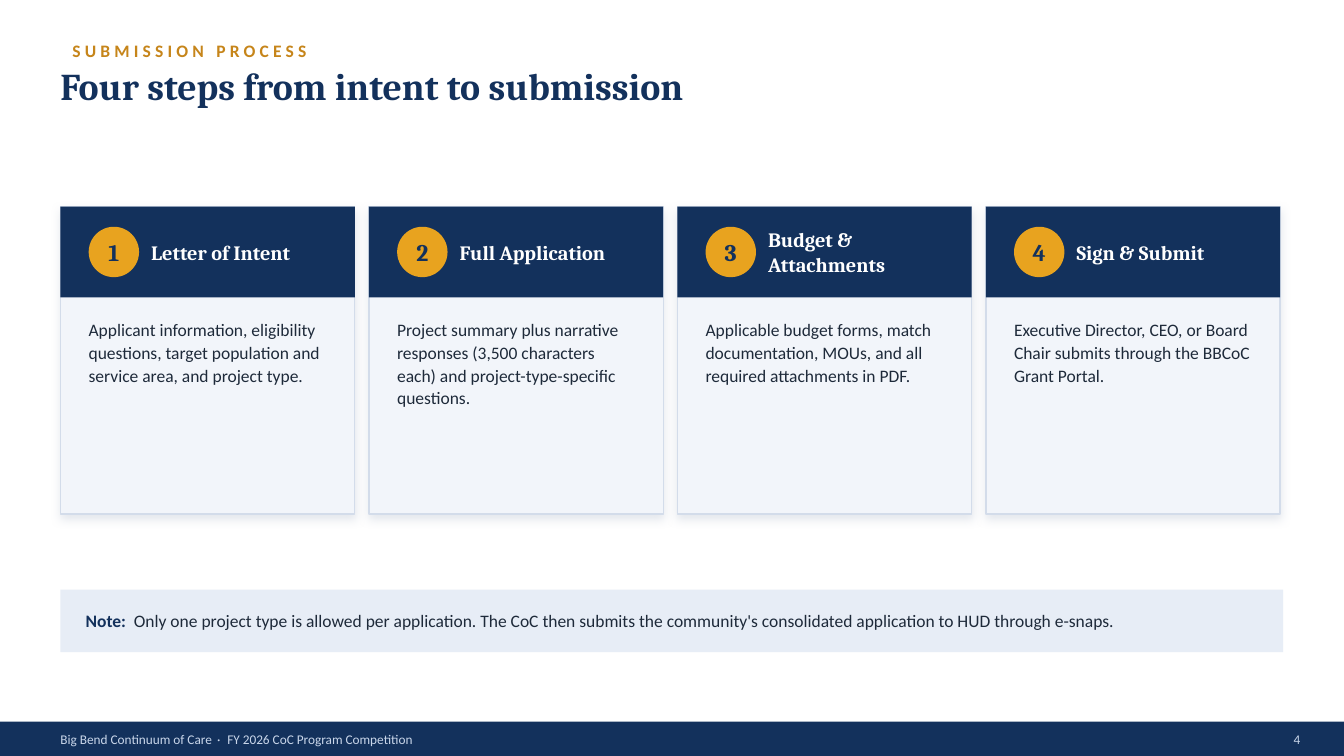
from dataclasses import dataclass
from typing import NamedTuple

from lxml import etree
from pptx import Presentation
from pptx import util as u
from pptx.dml.color import RGBColor
from pptx.enum import shapes, text
from pptx.oxml import ns

NAVY = RGBColor(0x13, 0x31, 0x5C)
GOLD = RGBColor(0xE8, 0xA3, 0x1F)
OCHRE = RGBColor(0xC6, 0x85, 0x1A)
INK = RGBColor(0x1E, 0x2A, 0x3A)
WHITE = RGBColor(0xFF, 0xFF, 0xFF)
PANEL = RGBColor(0xF2, 0xF5, 0xFA)
PANEL_EDGE = RGBColor(0xD3, 0xDC, 0xEA)
PANEL_SHADE = RGBColor(0x9A, 0xA7, 0xBC)
NOTE_FILL = RGBColor(0xE7, 0xED, 0xF6)
FOOTER_INK = RGBColor(0xC9, 0xD6, 0xEA)

CELL = u.Inches(0.1)
SLIDE_COLS, SLIDE_ROWS = 133.33, 75
MARGIN = 6
CARD_COLS, CARD_GAP = 29.2, 1.4
CARD_ROW, CARD_ROWS, HEADER_ROWS = 20.5, 30.5, 9
CARD_PAD, BADGE = 2.8, 5
FOOTER_ROW, FOOTER_ROWS = 71.6, 3.4

SANS, SERIF = "Calibri", "Cambria"
TOP, MIDDLE = text.MSO_ANCHOR.TOP, text.MSO_ANCHOR.MIDDLE
LEFT, CENTER, RIGHT = text.PP_ALIGN.LEFT, text.PP_ALIGN.CENTER, text.PP_ALIGN.RIGHT
RECT, OVAL = shapes.MSO_SHAPE.RECTANGLE, shapes.MSO_SHAPE.OVAL


class Box(NamedTuple):
    col: float
    row: float
    cols: float
    rows: float

    def emu(self) -> list[int]:
        return [round(length * CELL) for length in self]


class Run(NamedTuple):
    words: str
    color: RGBColor
    bold: bool = False
    spacing: float = 0


@dataclass
class Step:
    heading: str
    detail: str


STEPS = [
    Step("Letter of Intent",
         "Applicant information, eligibility questions, target population and "
         "service area, and project type."),
    Step("Full Application",
         "Project summary plus narrative responses (3,500 characters each) and "
         "project-type-specific questions."),
    Step("Budget & Attachments",
         "Applicable budget forms, match documentation, MOUs, and all required "
         "attachments in PDF."),
    Step("Sign & Submit",
         "Executive Director, CEO, or Board Chair submits through the BBCoC "
         "Grant Portal."),
]


def write(slide, box: Box, *runs: Run, size: float, font: str = SANS,
          anchor=MIDDLE, align=LEFT, leading: float = 1, inset: bool = False) -> None:
    frame = slide.shapes.add_textbox(*box.emu()).text_frame
    frame.word_wrap = True
    frame.vertical_anchor = anchor
    if not inset:
        frame.margin_left = frame.margin_right = 0
        frame.margin_top = frame.margin_bottom = 0
    paragraph = frame.paragraphs[0]
    paragraph.alignment = align
    paragraph.line_spacing = leading
    for words, color, bold, spacing in runs:
        run = paragraph.add_run()
        run.text = words
        run.font.name = font
        run.font.size = u.Pt(size)
        run.font.bold = bold
        run.font.color.rgb = color
        if spacing:
            run.font._element.set("spc", str(round(spacing * 100)))


def block(slide, box: Box, fill: RGBColor, kind=RECT):
    shape = slide.shapes.add_shape(kind, *box.emu())
    shape.shadow.inherit = False
    shape.fill.solid()
    shape.fill.fore_color.rgb = fill
    shape.line.fill.background()
    return shape


def cast_shadow(shape) -> None:
    effects = shape.element.spPr.find(ns.qn("a:effectLst"))
    shadow = etree.SubElement(effects, ns.qn("a:outerShdw"), blurRad=str(u.Pt(7)),
                              dist=str(u.Pt(3)), dir="5400000", rotWithShape="0")
    color = etree.SubElement(shadow, ns.qn("a:srgbClr"), val=str(PANEL_SHADE))
    etree.SubElement(color, ns.qn("a:alpha"), val="28000")


def draw_step(slide, index: int, step: Step) -> None:
    col = MARGIN + index * (CARD_COLS + CARD_GAP)
    inner = col + CARD_PAD
    badge = Box(inner, CARD_ROW + 2, BADGE, BADGE)

    panel = block(slide, Box(col, CARD_ROW, CARD_COLS, CARD_ROWS), PANEL)
    panel.line.color.rgb = PANEL_EDGE
    panel.line.width = u.Pt(1)
    cast_shadow(panel)
    block(slide, Box(col, CARD_ROW, CARD_COLS, HEADER_ROWS), NAVY)
    block(slide, badge, GOLD, OVAL)
    write(slide, badge, Run(str(index + 1), NAVY, True), size=17, font=SERIF, align=CENTER)
    write(slide, Box(col + 9, badge.row, 19.2, BADGE), Run(step.heading, WHITE, True),
          size=14.5, font=SERIF)
    write(slide, Box(inner, CARD_ROW + HEADER_ROWS + 2, CARD_COLS - 2 * CARD_PAD, 17.5),
          Run(step.detail, INK), size=12.5, anchor=TOP, leading=1.08)


def draw_heading(slide) -> None:
    write(slide, Box(6.2, 3.4, 110, 3.2), Run("SUBMISSION PROCESS", OCHRE, True, 3),
          size=12.5, inset=True)
    write(slide, Box(MARGIN, 6.2, 121, 8.5),
          Run("Four steps from intent to submission", NAVY, True),
          size=27, font=SERIF, anchor=TOP)


def draw_note(slide) -> None:
    block(slide, Box(MARGIN, 58.5, 121.3, 6.2), NOTE_FILL)
    write(slide, Box(MARGIN + 2.5, 58.5, 117, 6.2),
          Run("Note:", NAVY, True),
          Run(" ", NAVY, True, 2.8),
          Run("Only one project type is allowed per application. The CoC then submits "
              "the community's consolidated application to HUD through e-snaps.", INK),
          size=12.5)


def draw_footer(slide) -> None:
    block(slide, Box(0, FOOTER_ROW, SLIDE_COLS, FOOTER_ROWS), NAVY)
    write(slide, Box(MARGIN, FOOTER_ROW, 90, FOOTER_ROWS),
          Run("Big Bend Continuum of Care", FOOTER_INK),
          Run(" · ", FOOTER_INK, False, 1.4),
          Run("FY 2026 CoC Program Competition", FOOTER_INK), size=9.5)
    write(slide, Box(124, FOOTER_ROW, 5, FOOTER_ROWS), Run("4", FOOTER_INK),
          size=9.5, align=RIGHT)


def main() -> None:
    deck = Presentation()
    deck.slide_width = round(SLIDE_COLS * CELL)
    deck.slide_height = SLIDE_ROWS * CELL
    slide = deck.slides.add_slide(deck.slide_layouts[6])
    draw_heading(slide)
    for index, step in enumerate(STEPS):
        draw_step(slide, index, step)
    draw_note(slide)
    draw_footer(slide)
    deck.save("out.pptx")


if __name__ == "__main__":
    main()
